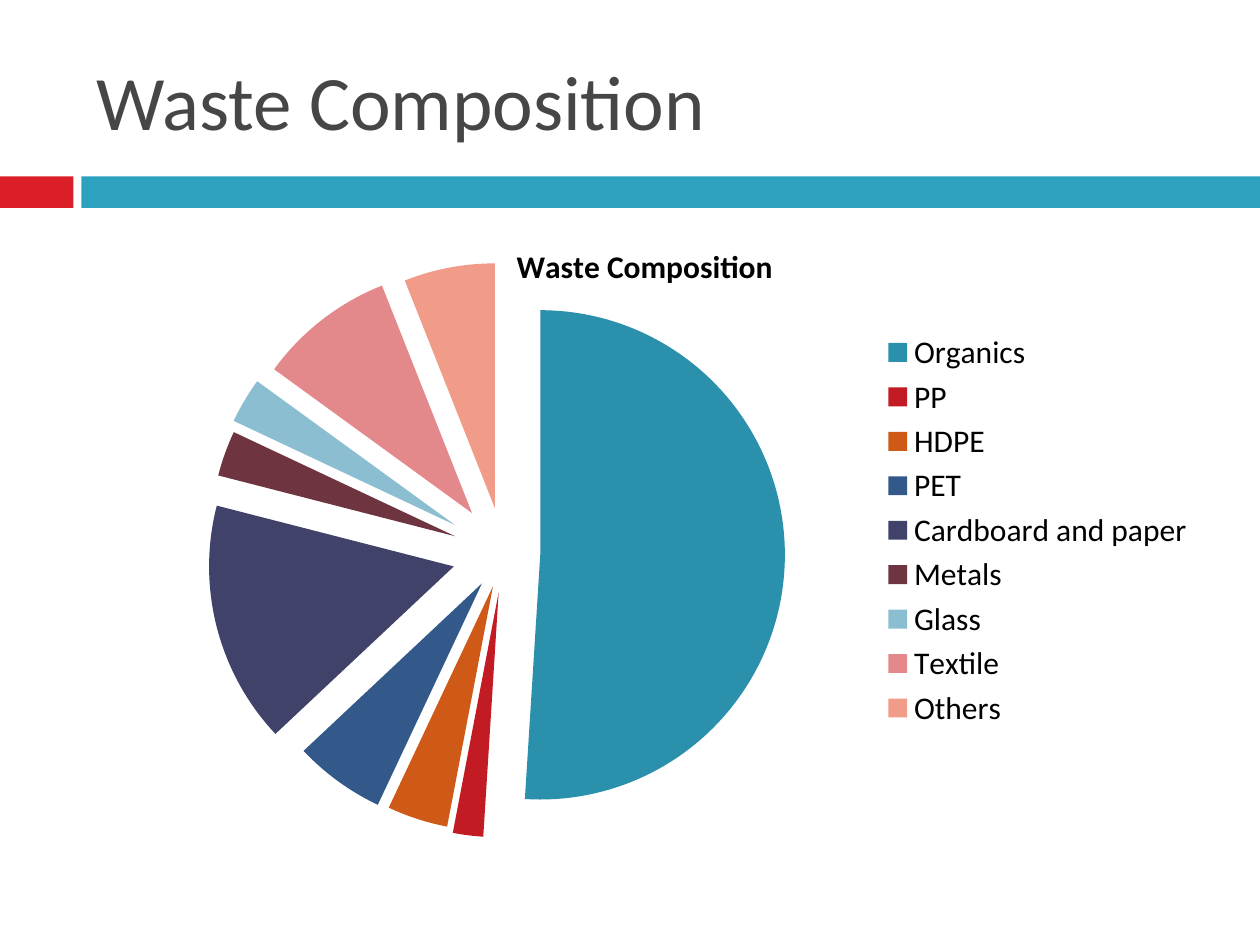
import dataclasses
import pptx
import pptx.chart.data
import pptx.dml.color
import pptx.enum.chart
import pptx.enum.shapes
import pptx.enum.text
import pptx.oxml
import pptx.oxml.ns
import pptx.util

Pt = pptx.util.Pt
qn = pptx.oxml.ns.qn


def rgb(code):
    return pptx.dml.color.RGBColor.from_string(code)


@dataclasses.dataclass(frozen=True)
class Theme:
    font: str = "Calibri"
    title: str = "464646"
    label: str = "000000"
    red: str = "DA1F28"
    teal: str = "2DA2BF"
    title_size: int = 44
    label_size: int = 18


class Deck:
    def __init__(self, theme, wide, high):
        self.theme = theme
        self.file = pptx.Presentation()
        self.file.slide_width = Pt(wide)
        self.file.slide_height = Pt(high)
        self.slide = self.file.slides.add_slide(self.file.slide_layouts[6])

    def style(self, font, size, color, bold=False):
        font.name = self.theme.font
        font.size = Pt(size)
        font.bold = bold
        font.color.rgb = rgb(color)

    def band(self, box, color):
        kind = pptx.enum.shapes.MSO_SHAPE.RECTANGLE
        shape = self.slide.shapes.add_shape(kind, *map(Pt, box))
        shape.shadow.inherit = False
        shape.fill.solid()
        shape.fill.fore_color.rgb = rgb(color)
        shape.line.fill.background()

    def title(self, box, text):
        frame = self.slide.shapes.add_textbox(*map(Pt, box)).text_frame
        frame.word_wrap = True
        frame.vertical_anchor = pptx.enum.text.MSO_ANCHOR.MIDDLE
        run = frame.paragraphs[0].add_run()
        run.text = text
        self.style(run.font, self.theme.title_size, self.theme.title)

    def layout(self, parent, index, **parts):
        for old in parent.findall(qn("c:layout")):
            parent.remove(old)
        body = "".join(f'<c:{name} val="{val}"/>' for name, val in parts.items())
        space = pptx.oxml.ns.nsdecls("c")
        parent.insert(index, pptx.oxml.parse_xml(
            f"<c:layout {space}><c:manualLayout>{body}</c:manualLayout></c:layout>"))

    def pie(self, box, text, rows):
        data = pptx.chart.data.CategoryChartData()
        data.categories = [row[0] for row in rows]
        data.add_series(text, [row[1] for row in rows])
        kind = pptx.enum.chart.XL_CHART_TYPE.PIE
        chart = self.slide.shapes.add_chart(kind, *map(Pt, box), data).chart
        size, color = self.theme.label_size, self.theme.label
        self.style(chart.font, size, color)

        chart.has_title = True
        run = chart.chart_title.text_frame.paragraphs[0].add_run()
        run.text = text
        self.style(run.font, size, color, True)
        self.layout(chart.chart_title._element, 1,
                    xMode="edge", yMode="edge", x=0.38, y=0.03)

        chart.has_legend = True
        chart.legend.position = pptx.enum.chart.XL_LEGEND_POSITION.RIGHT
        chart.legend.include_in_layout = False
        self.style(chart.legend.font, size, color)

        plot = chart.plots[0]
        plot.vary_by_categories = True
        self.layout(plot._element.getparent(), 0, layoutTarget="inner",
                    xMode="edge", yMode="edge", x=0.143, y=0.143, w=0.461, h=0.79)
        part = plot.series[0]
        for index, row in enumerate(rows):
            look = part.points[index].format
            look.fill.solid()
            look.fill.fore_color.rgb = rgb(row[2])
            look.line.fill.background()
        for point, row in zip(part._element.findall(qn("c:dPt")), rows):
            gap = pptx.oxml.parse_xml(
                f'<c:explosion {pptx.oxml.ns.nsdecls("c")} val="{row[3]}"/>')
            point.find(qn("c:spPr")).addprevious(gap)


def main():
    theme = Theme()
    wide, high = 720, 540
    deck = Deck(theme, wide, high)
    top, thick, start = 100.8, 18, 46.5
    deck.band((0, top, 42, thick), theme.red)
    deck.band((start, top, wide - start, thick), theme.teal)
    left, span = 48, 642
    name = "Waste Composition"
    deck.title((left, 18, span, 78), name)
    waste = [
        ("Organics", 51, "2A90AC", 15),
        ("PP", 2, "C31B24", 16),
        ("HDPE", 4, "CF5917", 14),
        ("PET", 6, "33588A", 15),
        ("Cardboard and paper", 16, "40426A", 21),
        ("Metals", 3, "6E3541", 21),
        ("Glass", 3, "8BBED0", 23),
        ("Textile", 9, "E3888B", 21),
        ("Others", 6, "F19C88", 19),
    ]
    deck.pie((left, 126, span, 354), name, waste)
    deck.file.save("out.pptx")


if __name__ == "__main__":
    main()
